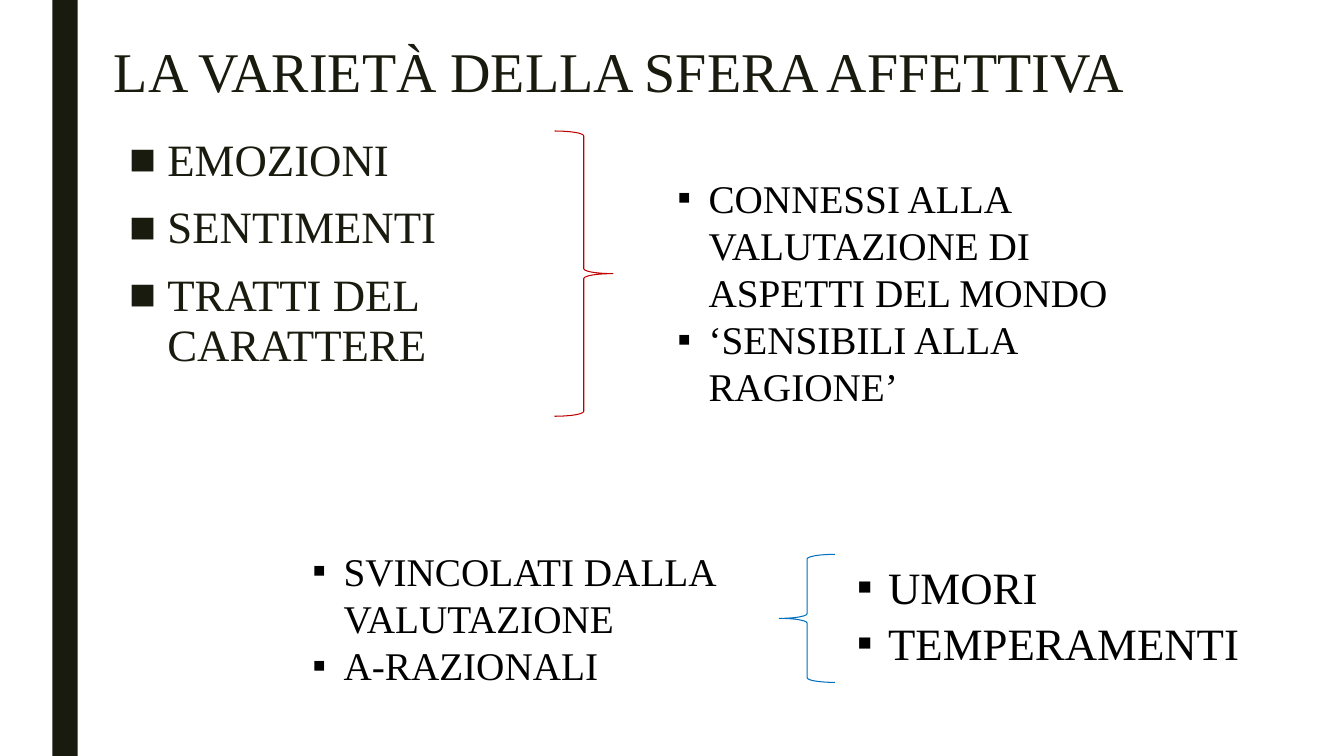
from lxml import etree
from pptx import Presentation
from pptx.dml.color import RGBColor
from pptx.enum.shapes import MSO_SHAPE
from pptx.enum.text import MSO_ANCHOR, MSO_AUTO_SIZE, PP_ALIGN
from pptx.oxml.ns import qn
from pptx.util import Inches, Pt

RECTANGLE = MSO_SHAPE.RECTANGLE
RIGHT_BRACE, LEFT_BRACE = MSO_SHAPE.RIGHT_BRACE, MSO_SHAPE.LEFT_BRACE
TOP, MIDDLE = MSO_ANCHOR.TOP, MSO_ANCHOR.MIDDLE
NO_AUTOFIT, LEFT = MSO_AUTO_SIZE.NONE, PP_ALIGN.LEFT

FONT = "Times New Roman"
DARK, BLACK, RED, BLUE = "191B0E", "000000", "C00000", "0070C0"
TITLE_FORMAT = {"line_spacing": 0.89}
BODY_FORMAT = {"line_spacing": 0.94, "space_before": Pt(10), "space_after": Pt(2)}


def color(value):
    return RGBColor.from_string(value)


class SlideBuilder:
    def __init__(self, presentation):
        self.slide = presentation.slides.add_slide(presentation.slide_layouts[1])

    def place(self, shape, box):
        names = ("left", "top", "width", "height")
        for name, value in zip(names, box):
            setattr(shape, name, Inches(value))

    def fill_text(self, shape, lines, size, text_color, formats, anchor=TOP):
        """Fill the text frame with one formatted paragraph per line."""
        frame = shape.text_frame
        frame.text = "\n".join(lines)
        settings = {"word_wrap": True, "auto_size": NO_AUTOFIT, "vertical_anchor": anchor}
        for name, value in settings.items():
            setattr(frame, name, value)
        for paragraph in frame.paragraphs:
            for name, value in {"alignment": LEFT, **formats}.items():
                setattr(paragraph, name, value)
            font = paragraph.runs[0].font
            font.name, font.size = FONT, Pt(size)
            font.color.rgb = color(text_color)
        return frame

    def add_bullets(self, frame, character, bullet_color, margin, hanging):
        for paragraph in frame.paragraphs:
            properties = paragraph._p.get_or_add_pPr()
            properties.set("marL", str(Inches(margin)))
            properties.set("indent", str(-Inches(hanging)))
            fill = etree.SubElement(properties, qn("a:buClr"))
            etree.SubElement(fill, qn("a:srgbClr"), val=bullet_color)
            etree.SubElement(properties, qn("a:buFont"), typeface=FONT)
            etree.SubElement(properties, qn("a:buChar"), char=character)

    def title(self, text, box):
        shape = self.slide.shapes.title
        self.place(shape, box)
        self.fill_text(shape, [text], 40, DARK, TITLE_FORMAT, MIDDLE)

    def body(self, lines, box):
        shape = self.slide.placeholders[1]
        self.place(shape, box)
        frame = self.fill_text(shape, lines, 32, DARK, BODY_FORMAT)
        self.add_bullets(frame, "■", DARK, 0.38, 0.38)

    def bullet_box(self, lines, box, size=28, margin=0.31, space_after=0):
        shape = self.slide.shapes.add_textbox(*map(Inches, box))
        frame = self.fill_text(shape, lines, size, BLACK, {"space_after": Pt(space_after)})
        self.add_bullets(frame, "▪", BLACK, margin, 0.31)

    def bar(self, box, fill_color):
        shape = self.slide.shapes.add_shape(RECTANGLE, *map(Inches, box))
        shape.shadow.inherit = False
        shape.fill.solid()
        shape.fill.fore_color.rgb = color(fill_color)
        shape.line.fill.background()

    def brace(self, kind, box, line_color):
        shape = self.slide.shapes.add_shape(kind, *map(Inches, box))
        shape.shadow.inherit = False
        shape.fill.background()
        shape.line.color.rgb = color(line_color)
        shape.line.width = Pt(0.75)


def main():
    presentation = Presentation()
    presentation.slide_width, presentation.slide_height = Inches(13.33), Inches(7.5)
    builder = SlideBuilder(presentation)

    builder.bar((0.52, 0, 0.25, 7.5), DARK)
    builder.title("LA VARIETÀ DELLA SFERA AFFETTIVA", (1.03, 0.37, 10.5, 0.74))

    builder.body(["EMOZIONI", "SENTIMENTI", "TRATTI DEL CARATTERE"], (1.18, 1.3, 3.78, 2.59))
    builder.brace(RIGHT_BRACE, (5.5, 1.3, 0.58, 2.83), RED)
    builder.bullet_box(
        ["CONNESSI ALLA VALUTAZIONE DI ASPETTI DEL MONDO", "‘SENSIBILI ALLA RAGIONE’"],
        (6.62, 1.68, 5.16, 2.46))

    builder.bullet_box(["SVINCOLATI DALLA VALUTAZIONE", "A-RAZIONALI"], (3, 5.38, 4.73, 1.51))
    builder.brace(LEFT_BRACE, (7.73, 5.5, 0.55, 1.27), BLUE)
    builder.bullet_box(["UMORI", "TEMPERAMENTI"], (8.02, 5.5, 4.52, 1.47),
                       size=32, margin=0.69, space_after=2)

    presentation.save("out.pptx")


if __name__ == "__main__":
    main()
